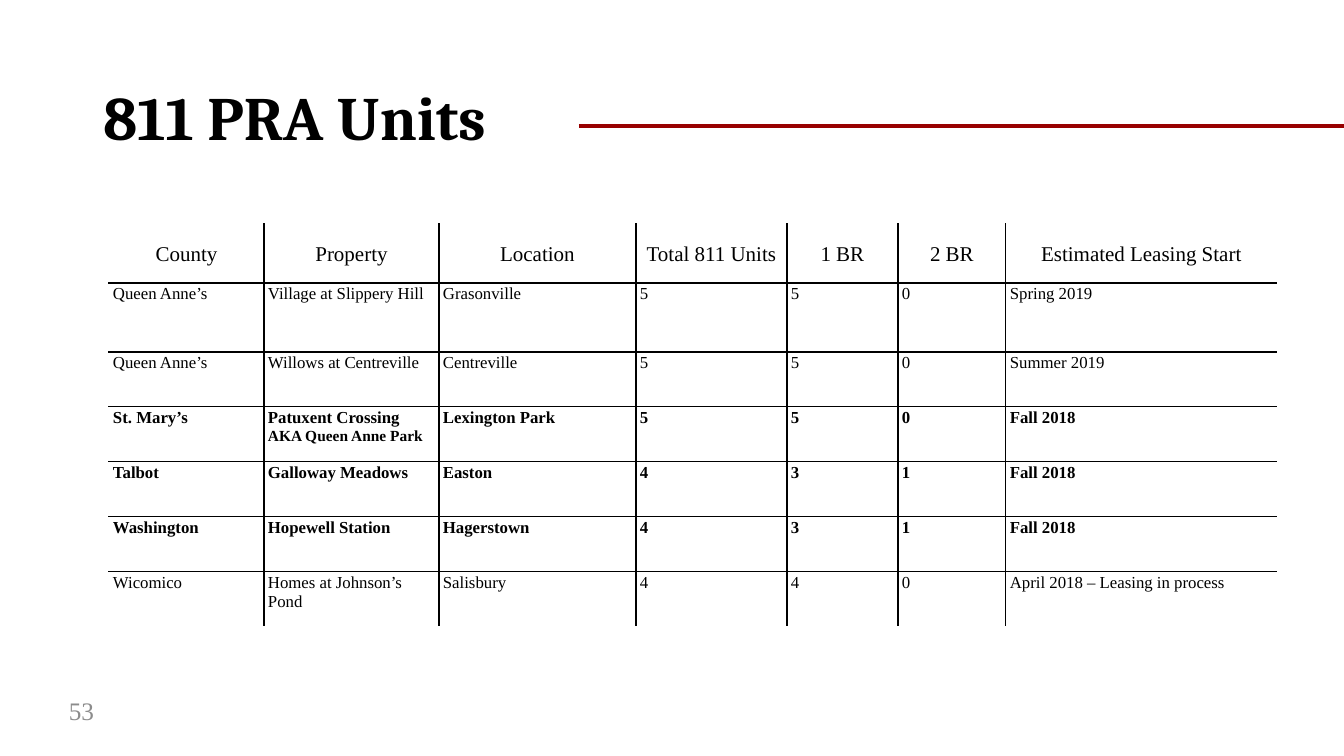
from lxml.etree import SubElement
from pptx import Presentation
from pptx.dml.color import RGBColor
from pptx.enum.shapes import MSO_CONNECTOR as Link
from pptx.enum.text import MSO_ANCHOR as Anchor, PP_ALIGN as Align
from pptx.oxml.ns import qn
from pptx.util import Pt

HUES = {"ink": "000000", "paper": "FFFFFF", "rule": "980000", "page": "8C8C8C"}
SERIF = "Times New Roman"


def px(*nums):
    return [round(n * 914400 / 100.8) for n in nums]


def style(font, size, hue="ink", name=SERIF, bold=False):
    font.size, font.name, font.bold = Pt(size), name, bold
    font.color.rgb = RGBColor.from_string(HUES[hue])


deck = Presentation()
deck.slide_width, deck.slide_height = px(1344, 756)
slide = deck.slides.add_slide(deck.slide_layouts[5])

# Title
title = slide.shapes.title
title.left, title.top, title.width, title.height = px(93, 66, 1159, 110)
frame = title.text_frame
frame.text = "811 PRA Units"
frame.vertical_anchor = Anchor.MIDDLE
para = frame.paragraphs[0]
para.alignment, para.line_spacing = Align.LEFT, 0.9
style(para.font, 44, name="Cambria", bold=True)

# Page number
page = slide.shapes.add_textbox(*px(59, 690, 60, 40)).text_frame
page.text = "53"
page.word_wrap = True
page.vertical_anchor = Anchor.MIDDLE
style(page.paragraphs[0].font, 18, "page")

# Red rule beside the title
rule = slide.shapes.add_connector(Link.STRAIGHT, *px(579, 126, 1344, 126))
rule.line.color.rgb = RGBColor.from_string(HUES["rule"])
rule.line.width = Pt(2.25)
SubElement(rule._element.spPr, qn("a:effectLst"))

# Table data: a tuple holds the main text and a smaller ending
ROWS = [
    ["County", "Property", "Location", "Total 811 Units", "1 BR", "2 BR",
     "Estimated Leasing Start"],
    ["Queen Anne’s", "Village at Slippery Hill", "Grasonville", "5", "5", "0",
     "Spring 2019"],
    ["Queen Anne’s", "Willows at Centreville", "Centreville", "5", "5", "0",
     "Summer 2019"],
    ["St. Mary’s", ("Patuxent Crossing ", "AKA Queen Anne Park"),
     "Lexington Park", "5", "5", "0", "Fall 2018"],
    ["Talbot", "Galloway Meadows", "Easton", "4", "3", "1", "Fall 2018"],
    ["Washington", "Hopewell Station", "Hagerstown", "4", "3", "1", "Fall 2018"],
    ["Wicomico", "Homes at Johnson’s Pond", "Salisbury", "4", "4", "0",
     "April 2018 – Leasing in process"],
]
WIDE = [155, 175, 197, 151, 111, 108, 271]
HIGH = [59, 69] + [55] * 5
BOLD = {3, 4, 5}
last_row, last_col = len(HIGH) - 1, len(WIDE) - 1

# Table grid
grid = slide.shapes.add_table(len(HIGH), len(WIDE),
                              *px(109, 224, sum(WIDE), sum(HIGH))).table
grid.horz_banding = False
for col, wide in zip(grid.columns, px(*WIDE)):
    col.width = wide
for row, high in zip(grid.rows, px(*HIGH)):
    row.height = high

# Table cells
for r, row in enumerate(ROWS):
    for c, text in enumerate(row):
        cell = grid.cell(r, c)
        cell.margin_left, cell.margin_right = px(4, 4)
        cell.margin_top = cell.margin_bottom = 0
        head = r == 0
        cell.vertical_anchor = Anchor.MIDDLE if head else Anchor.TOP

        # Black inner borders, white outer ones
        outer = {"L": c == 0, "R": c == last_col, "T": head, "B": r == last_row}
        for side, edge in outer.items():
            line = SubElement(cell._tc.get_or_add_tcPr(), qn("a:ln" + side),
                              w=str(Pt(1)))
            fill = SubElement(line, qn("a:solidFill"))
            SubElement(fill, qn("a:srgbClr"), val=HUES["paper" if edge else "ink"])
        cell.fill.background()

        para = cell.text_frame.paragraphs[0]
        para.alignment = Align.CENTER if head else Align.LEFT
        para.line_spacing, para.space_after = 1.07, Pt(8)
        style(para.font, 15 if head else 12, bold=r in BOLD)
        main, *tail = text if isinstance(text, tuple) else (text,)
        para.add_run().text = main
        for part in tail:
            run = para.add_run()
            run.text, run.font.size = part, Pt(11)

deck.save("out.pptx")
